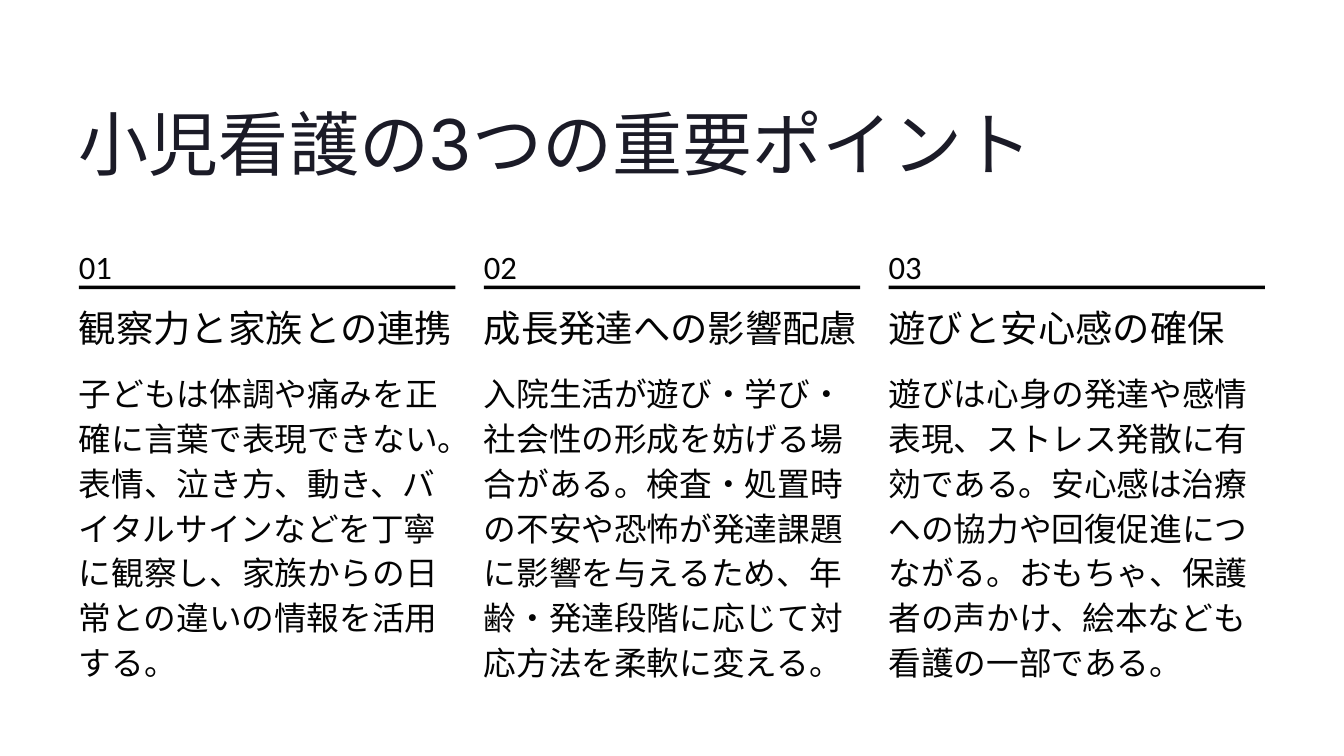
from dataclasses import dataclass

from pptx import Presentation
from pptx.dml.color import RGBColor
from pptx.enum import shapes, text
from pptx.util import Pt


@dataclass(frozen=True)
class Theme:
    title_color: RGBColor = RGBColor(0x1B, 0x1B, 0x27)
    ink: RGBColor = RGBColor(0x03, 0x03, 0x03)
    title_size: int = 60
    heading_size: int = 32
    body_size: int = 28


theme = Theme()

MARGIN = 67.7
COLUMN_WIDTH = 322.6
COLUMN_STEP = 347

POINTS = [
    ("観察力と家族との連携",
     "子どもは体調や痛みを正確に言葉で表現できない。表情、泣き方、動き、"
     "バイタルサインなどを丁寧に観察し、家族からの日常との違いの情報を活用する。"),
    ("成長発達への影響配慮",
     "入院生活が遊び・学び・社会性の形成を妨げる場合がある。検査・処置時の不安や恐怖が"
     "発達課題に影響を与えるため、年齢・発達段階に応じて対応方法を柔軟に変える。"),
    ("遊びと安心感の確保",
     "遊びは心身の発達や感情表現、ストレス発散に有効である。安心感は治療への協力や"
     "回復促進につながる。おもちゃ、保護者の声かけ、絵本なども看護の一部である。"),
]


def set_text(sp, content, font, size, color, line_spacing):
    """Fill a shape with one left-aligned paragraph, without insets."""
    tf = sp.text_frame
    tf.text = content
    tf.word_wrap = True
    tf.auto_size = text.MSO_AUTO_SIZE.NONE
    tf.vertical_anchor = text.MSO_ANCHOR.TOP
    tf.margin_left = tf.margin_right = tf.margin_top = tf.margin_bottom = 0
    p = tf.paragraphs[0]
    p.alignment = text.PP_ALIGN.LEFT
    p.line_spacing = Pt(line_spacing)
    r = p.runs[0]
    r.font.name = font
    r.font.size = Pt(size)
    r.font.color.rgb = color


prs = Presentation()
prs.slide_width, prs.slide_height = Pt(1152), Pt(648)
s = prs.slides.add_slide(prs.slide_layouts.get_by_name("Title Only"))

title = s.shapes.title
title.left, title.top = Pt(MARGIN), Pt(82.8)
title.width, title.height = Pt(1152 - 2 * MARGIN), Pt(75.6)
set_text(title, "小児看護の3つの重要ポイント", "Inter",
         theme.title_size, theme.title_color, 75)

for i, (heading, body) in enumerate(POINTS):
    left = MARGIN + i * COLUMN_STEP

    rule = s.shapes.add_shape(shapes.MSO_SHAPE.RECTANGLE,
                              Pt(left), Pt(244.8), Pt(COLUMN_WIDTH), Pt(3))
    rule.shadow.inherit = False
    rule.fill.solid()
    rule.fill.fore_color.rgb = theme.ink
    rule.line.fill.background()

    for content, top, height, font, size, line_spacing in [
        (f"{i + 1:02}", 206.6, 30.2, "Calibri", theme.body_size, 38.5),
        (heading, 262.8, 37.5, "Inter", theme.heading_size, 37.5),
        (body, 315.4, 231.8, "Roboto", theme.body_size, 38.5),
    ]:
        sp = s.shapes.add_textbox(Pt(left), Pt(top), Pt(COLUMN_WIDTH), Pt(height))
        set_text(sp, content, font, size, theme.ink, line_spacing)

prs.save("out.pptx")
